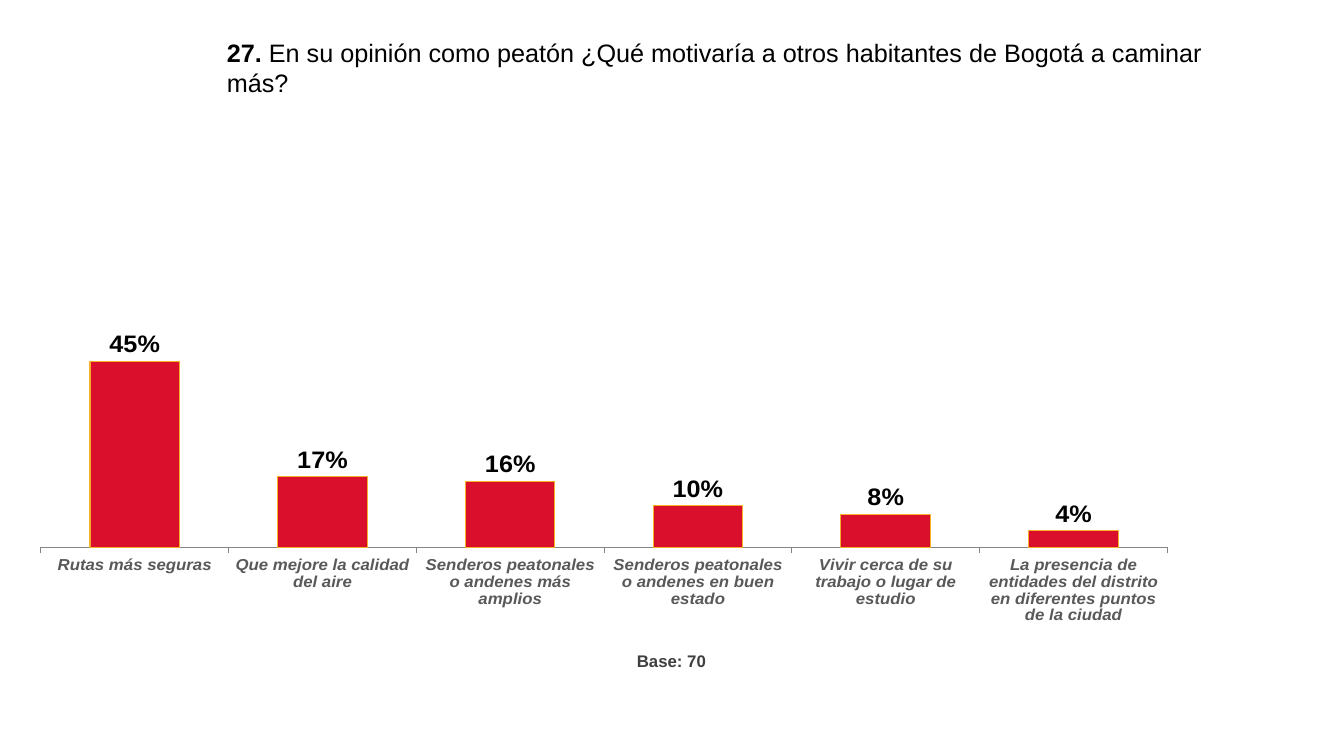
from lxml import etree
from pptx import Presentation
from pptx.chart.data import CategoryChartData
from pptx.dml.color import RGBColor
from pptx.enum.chart import XL_CHART_TYPE, XL_LABEL_POSITION, XL_TICK_MARK
from pptx.enum.text import MSO_ANCHOR, MSO_AUTO_SIZE, PP_ALIGN
from pptx.oxml import parse_xml
from pptx.oxml.ns import nsdecls, qn
from pptx.util import Inches, Pt

COLUMNS = XL_CHART_TYPE.COLUMN_CLUSTERED
OUTSIDE_END = XL_LABEL_POSITION.OUTSIDE_END
TICK_OUTSIDE = XL_TICK_MARK.OUTSIDE
TOP = MSO_ANCHOR.TOP
NO_AUTOFIT = MSO_AUTO_SIZE.NONE
FIT_SHAPE = MSO_AUTO_SIZE.SHAPE_TO_FIT_TEXT
LEFT = PP_ALIGN.LEFT
RIGHT = PP_ALIGN.RIGHT


def color(value):
    return RGBColor.from_string(value)


def style_font(font, size, value, bold=False, italic=False):
    font.name = "Arial"
    font.size = Pt(size)
    font.bold = bold
    font.italic = italic
    font.color.rgb = color(value)


answers = {
    "Rutas más seguras": 0.45,
    "Que mejore la calidad del aire": 0.17,
    "Senderos peatonales o andenes más amplios": 0.16,
    "Senderos peatonales o andenes en buen estado": 0.1,
    "Vivir cerca de su trabajo o lugar de estudio": 0.08,
    "La presencia de entidades del distrito en diferentes puntos de la ciudad": 0.04,
}

deck = Presentation()
deck.slide_width = Inches(13.33)
deck.slide_height = Inches(7.5)
page = deck.slides.add_slide(deck.slide_layouts[5])

chart_data = CategoryChartData(number_format="0%")
chart_data.categories = list(answers)
chart_data.add_series("Series 1", list(answers.values()))
chart = page.shapes.add_chart(
    COLUMNS, Inches(0.4), Inches(0.88), Inches(12.42), Inches(5.31), chart_data
).chart
chart.has_title = False
chart.has_legend = False
style_font(chart.font, 18, "000000")

plot_area = chart.plots[0]
plot_area.gap_width = 110
plot_area.vary_by_categories = False
bars = plot_area.series[0]
bars.format.fill.solid()
bars.format.fill.fore_color.rgb = color("DA0F2B")
bars.format.line.color.rgb = color("F5B02B")
bars.format.line.width = Pt(0.75)

labels = bars.data_labels
labels.show_value = True
labels.position = OUTSIDE_END
labels.number_format = "0%"
labels.number_format_is_linked = False
style_font(labels.font, 18, "000000", bold=True)

category_axis = chart.category_axis
category_axis.major_tick_mark = TICK_OUTSIDE
category_axis.format.line.color.rgb = color("868686")
category_axis.format.line.width = Pt(0.75)
style_font(category_axis.tick_labels.font, 12, "595959", bold=True, italic=True)

value_axis = chart.value_axis
value_axis.minimum_scale = 0
value_axis.maximum_scale = 1
value_axis.has_major_gridlines = False
value_axis.tick_labels.number_format = "0%"
value_axis.tick_labels.number_format_is_linked = False
value_axis.visible = False

layout = parse_xml(f'<c:layout {nsdecls("c")}/>')
manual = etree.SubElement(layout, qn("c:manualLayout"))
settings = {
    "layoutTarget": "inner", "xMode": "edge", "yMode": "edge",
    "x": "0", "y": "0.09", "w": "0.9", "h": "0.82",
}
for tag, value in settings.items():
    etree.SubElement(manual, qn(f"c:{tag}")).set("val", value)
plot_xml = chart.element.find(".//" + qn("c:plotArea"))
for old_layout in plot_xml.findall(qn("c:layout")):
    plot_xml.remove(old_layout)
plot_xml.insert(0, layout)

base_box = page.shapes.add_textbox(Inches(6.12), Inches(6.44), Inches(0.98), Inches(0.25))
base_frame = base_box.text_frame
base_frame.word_wrap = True
base_frame.auto_size = FIT_SHAPE
base_frame.text = "Base: 70"
base_para = base_frame.paragraphs[0]
base_para.alignment = RIGHT
base_para.line_spacing = 0.83
style_font(base_para.runs[0].font, 12, "3F3F3F", bold=True)

title = page.shapes.title
title.left, title.top = Inches(2.15), Inches(0.32)
title.width, title.height = Inches(9.9), Inches(0.4)
title_frame = title.text_frame
title_frame.word_wrap = True
title_frame.auto_size = NO_AUTOFIT
title_frame.vertical_anchor = TOP
title_para = title_frame.paragraphs[0]
title_para.alignment = LEFT
question = "En su opinión como peatón ¿Qué motivaría a otros habitantes de Bogotá a caminar más?"
for text, bold in (("27. ", True), (question, False)):
    span = title_para.add_run()
    span.text = text
    style_font(span.font, 18, "000000", bold=bold)

deck.save("out.pptx")
